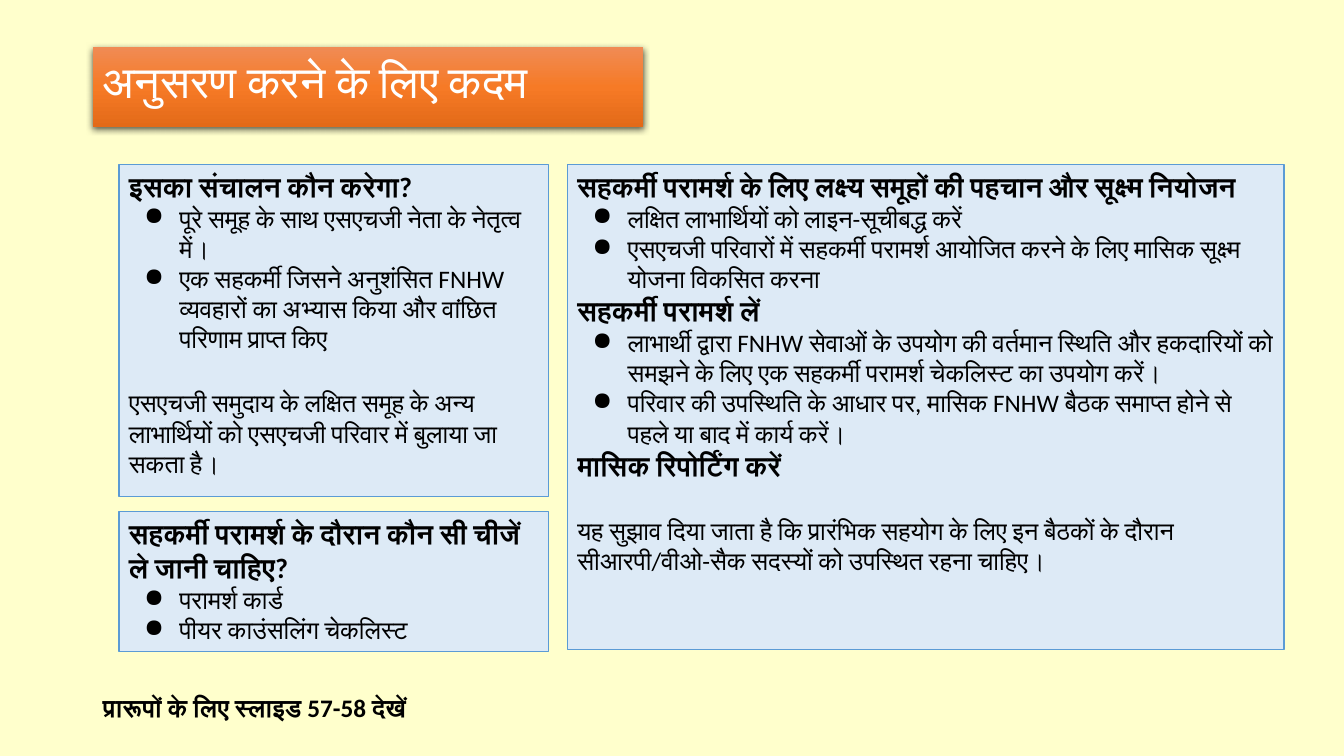
"""Build the slide on the steps of peer counselling."""
from lxml.etree import SubElement
from pptx import Presentation
from pptx.dml.color import RGBColor
from pptx.enum.shapes import MSO_SHAPE
from pptx.enum.text import MSO_ANCHOR, MSO_AUTO_SIZE, PP_ALIGN
from pptx.oxml import parse_xml
from pptx.oxml.ns import nsdecls, qn
from pptx.util import Cm, Pt

CREAM = RGBColor(0xFF, 0xFF, 0xCC)
PALE_BLUE = RGBColor(0xDD, 0xEA, 0xF6)
BLUE = RGBColor(0x5B, 0x9B, 0xD5)
BLACK = RGBColor(0, 0, 0)
WHITE = RGBColor(0xFF, 0xFF, 0xFF)
BANNER_STOPS = ((0, RGBColor(0xF0, 0x8B, 0x54)),
                (50, RGBColor(0xF6, 0x7A, 0x26)),
                (100, RGBColor(0xE3, 0x6A, 0x18)))
FONT = "Calibri"

HEADING = {"size": 20, "bold": True}
BULLET = {"bullet": True}
BODY = {}
CLOSING = {"before": 24}

LEFT_EDGE, BOX_LEFT, BOX_TOP, BOX_WIDTH = 2.34, 3, 4.14, 10.82
BANNER_WIDTH = 13.87

WHO = (
    ("इसका संचालन कौन करेगा?", HEADING),
    ("पूरे समूह के साथ एसएचजी नेता के नेतृत्व में।", BULLET),
    ("एक सहकर्मी जिसने अनुशंसित FNHW व्यवहारों का अभ्यास किया और वांछित परिणाम प्राप्त किए", BULLET),
    ("एसएचजी समुदाय के लक्षित समूह के अन्य लाभार्थियों को एसएचजी परिवार में बुलाया जा सकता है।", CLOSING),
)
MATERIALS = (
    ("सहकर्मी परामर्श के दौरान कौन सी चीजें ले जानी चाहिए?", HEADING),
    ("परामर्श कार्ड", BULLET),
    ("पीयर काउंसलिंग चेकलिस्ट", BULLET),
)
STEPS = (
    ("सहकर्मी परामर्श के लिए लक्ष्य समूहों की पहचान और सूक्ष्म नियोजन", HEADING),
    ("लक्षित लाभार्थियों को लाइन-सूचीबद्ध करें", BULLET),
    ("एसएचजी परिवारों में सहकर्मी परामर्श आयोजित करने के लिए मासिक सूक्ष्म योजना विकसित करना", BULLET),
    ("सहकर्मी परामर्श लें", HEADING),
    ("लाभार्थी द्वारा FNHW सेवाओं के उपयोग की वर्तमान स्थिति और हकदारियों को समझने के लिए "
     "एक सहकर्मी परामर्श चेकलिस्ट का उपयोग करें।", BULLET),
    ("परिवार की उपस्थिति के आधार पर, मासिक FNHW बैठक समाप्त होने से पहले या बाद में कार्य करें।", BULLET),
    ("मासिक रिपोर्टिंग करें", HEADING),
    ("यह सुझाव दिया जाता है कि प्रारंभिक सहयोग के लिए इन बैठकों के दौरान "
     "सीआरपी/वीओ-सैक सदस्यों को उपस्थित रहना चाहिए।", CLOSING),
)


def add_bullet(paragraph):
    """Give the paragraph a black round bullet and a hanging indent."""
    properties = paragraph._p.get_or_add_pPr()
    properties.set("marL", str(Cm(1.27)))
    properties.set("indent", str(Cm(-0.89)))
    colour = SubElement(properties, qn("a:buClr"))
    SubElement(colour, qn("a:srgbClr"), val=str(BLACK))
    SubElement(properties, qn("a:buChar"), char="●")


def write(paragraph, text, *, size=18, bold=False, colour=BLACK, bullet=False,
          before=0, line_spacing=None):
    """Write formatted text into a paragraph."""
    if bullet:
        add_bullet(paragraph)
    paragraph.alignment = PP_ALIGN.LEFT
    if before:
        paragraph.space_before = Pt(before)
    if line_spacing:
        paragraph.line_spacing = line_spacing
    run = paragraph.add_run()
    run.text = text
    run.font.size = Pt(size)
    run.font.bold = bold
    run.font.color.rgb = colour
    run.font.name = FONT
    SubElement(run._r.get_or_add_rPr(), qn("a:cs"), typeface=FONT)


def fill_frame(frame, content, anchor=MSO_ANCHOR.TOP):
    """Write all paragraphs of a text frame."""
    frame.word_wrap = True
    frame.auto_size = MSO_AUTO_SIZE.NONE
    frame.vertical_anchor = anchor
    for index, (text, style) in enumerate(content):
        paragraph = frame.add_paragraph() if index else frame.paragraphs[0]
        write(paragraph, text, **style)


def add_panel(slide, left, top, width, height, content):
    """Add a pale blue panel with its text."""
    panel = slide.shapes.add_shape(MSO_SHAPE.RECTANGLE, Cm(left), Cm(top), Cm(width), Cm(height))
    panel.shadow.inherit = False
    panel.fill.solid()
    panel.fill.fore_color.rgb = PALE_BLUE
    panel.line.color.rgb = BLUE
    panel.line.width = Pt(0.75)
    fill_frame(panel.text_frame, content)


def add_banner(slide):
    """Add the orange gradient bar with its soft shadow."""
    banner = slide.shapes.add_shape(MSO_SHAPE.RECTANGLE, Cm(LEFT_EDGE), Cm(1.19),
                                    Cm(BANNER_WIDTH), Cm(2.01))
    banner.shadow.inherit = False
    banner.line.fill.background()
    stops = "".join(f'<a:gs pos="{position * 1000}"><a:srgbClr val="{colour}"/></a:gs>'
                    for position, colour in BANNER_STOPS)
    gradient = parse_xml(f'<a:gradFill {nsdecls("a")} rotWithShape="1"><a:gsLst>{stops}</a:gsLst>'
                         '<a:lin ang="5400000" scaled="0"/></a:gradFill>')
    properties = banner._element.spPr
    properties.find(qn("a:prstGeom")).addnext(gradient)
    shadow = SubElement(properties.find(qn("a:effectLst")), qn("a:outerShdw"),
                        blurRad=str(Pt(4.5)), dist=str(Pt(1.5)), dir="5400000",
                        algn="ctr", rotWithShape="0")
    tint = SubElement(shadow, qn("a:srgbClr"), val=str(BLACK))
    SubElement(tint, qn("a:alpha"), val="63000")


def place_title(slide, text):
    """Place the title in front of the banner."""
    title = slide.shapes.title
    title.left, title.top = Cm(LEFT_EDGE), Cm(0.86)
    title.width, title.height = Cm(BANNER_WIDTH), Cm(2.51)
    style = {"size": 32, "colour": WHITE, "line_spacing": 0.9}
    fill_frame(title.text_frame, ((text, style),), MSO_ANCHOR.MIDDLE)
    slide.shapes._spTree.append(title._element)


def add_note(slide, text):
    """Add the bold reference line at the foot of the slide."""
    note = slide.shapes.add_textbox(Cm(LEFT_EDGE), Cm(17.32), Cm(9.58), Cm(1.02))
    fill_frame(note.text_frame, ((text, {"bold": True}),))


def main():
    """Build and save the slide."""
    deck = Presentation()
    deck.slide_width, deck.slide_height = Cm(33.87), Cm(19.05)
    slide = deck.slides.add_slide(deck.slide_layouts[5])
    slide.background.fill.solid()
    slide.background.fill.fore_color.rgb = CREAM
    add_panel(slide, 14.3, BOX_TOP, 18.06, 12.22, STEPS)
    add_panel(slide, BOX_LEFT, BOX_TOP, BOX_WIDTH, 8.38, WHO)
    add_panel(slide, BOX_LEFT, 12.9, BOX_WIDTH, 3.51, MATERIALS)
    add_note(slide, "प्रारूपों के लिए स्लाइड 57-58 देखें")
    add_banner(slide)
    place_title(slide, "अनुसरण करने के लिए कदम")
    deck.save("out.pptx")


if __name__ == "__main__":
    main()
